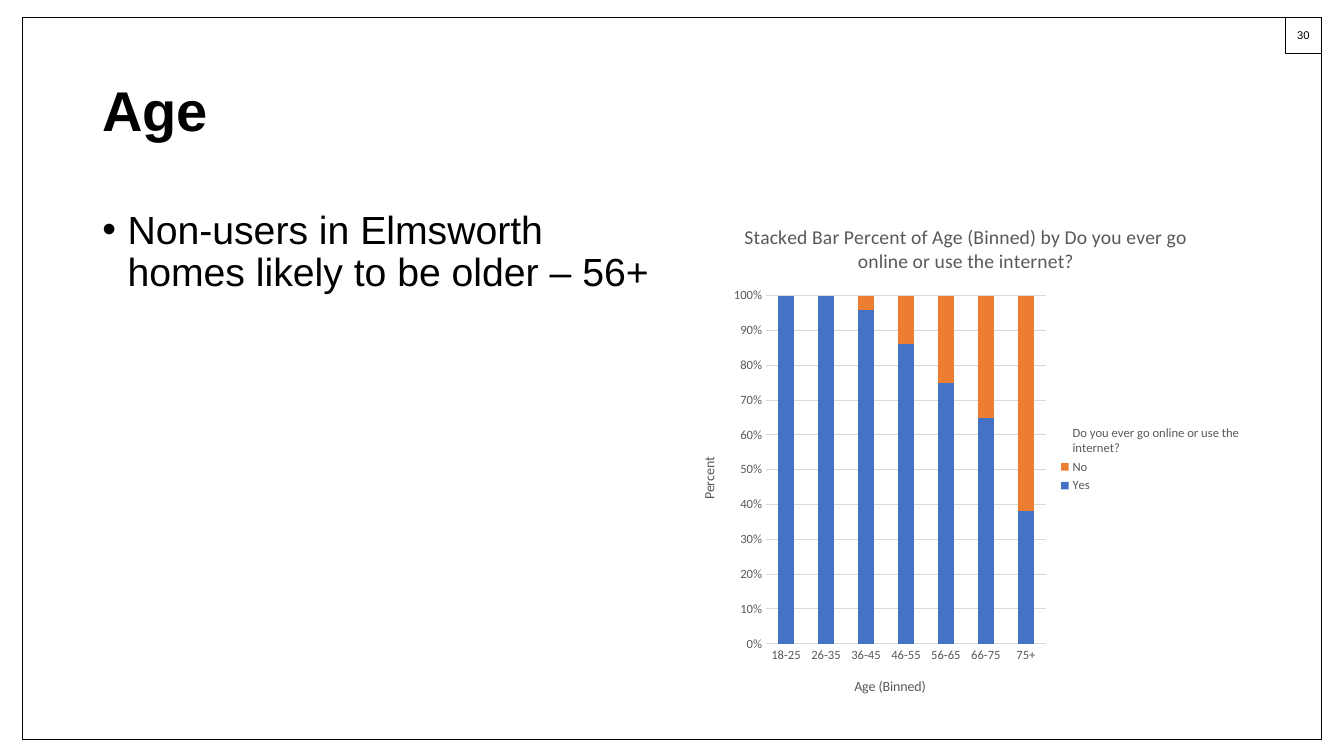
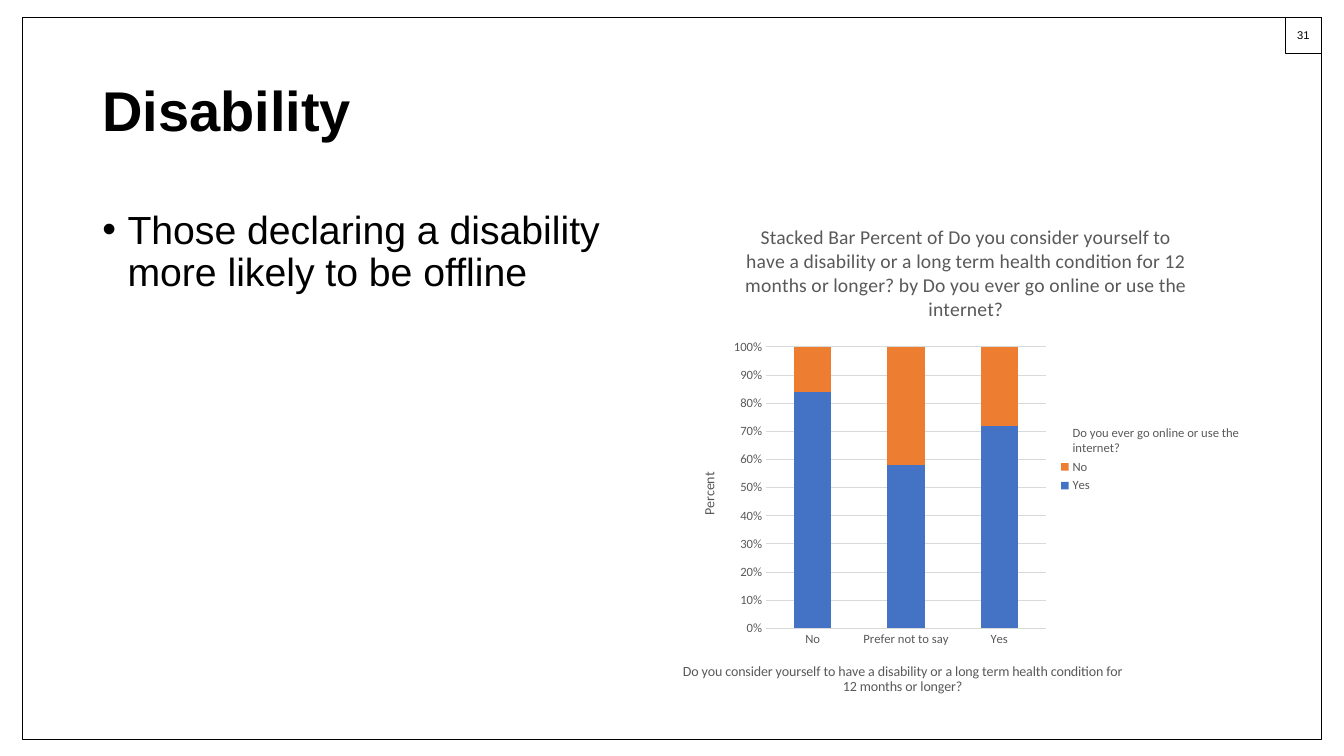
from dataclasses import dataclass
from typing import Any, Optional

import lxml.etree
import pptx
import pptx.chart.data
import pptx.dml.color
import pptx.enum.chart
import pptx.enum.text
import pptx.enum.shapes
import pptx.oxml.ns
import pptx.util

Pt = pptx.util.Pt
qn = pptx.oxml.ns.qn

COLOURS = {
    "ink": "000000",
    "label": "595959",
    "grid": "D9D9D9",
    "yes": "4472C4",
    "no": "ED7D31",
}
TEXT_FONT = "Arial"
CHART_FONT = "Calibri"
QUESTION = "Do you ever go online or use the internet?"
CONDITION = ("Do you consider yourself to have a disability or a long term "
             "health condition for 12 months or longer?")


@dataclass(frozen=True)
class Box:
    left: float
    top: float
    width: float
    height: float

    def lengths(self) -> tuple:
        return Pt(self.left), Pt(self.top), Pt(self.width), Pt(self.height)


@dataclass(frozen=True)
class Spot:
    x: float
    y: float
    w: Optional[float] = None
    h: Optional[float] = None


@dataclass(frozen=True)
class Finding:
    number: str
    heading: str
    point: str
    variable: str
    groups: tuple
    yes: tuple
    no: tuple
    plot: Spot
    percent_title: Spot
    variable_title: Spot


FRAME = Box(16.2, 12.3, 927.6, 515.8)
NUMBER = Box(918.3, 12.3, 25.5, 25.5)
HEADING = Box(66, 28.8, 828, 104.4)
POINT = Box(66, 146.9, 406, 365)
CHART = Box(486, 145.5, 408, 365.6)

FINDINGS = (
    Finding(
        "30", "Age", "Non-users in Elmsworth homes likely to be older – 56+",
        "Age (Binned)",
        ("18-25", "26-35", "36-45", "46-55", "56-65", "66-75", "75+"),
        (100, 100, 96, 86, 75, 65, 38),
        (None, None, 4, 14, 25, 35, 62),
        Spot(0.15, 0.18, 0.49, 0.68), Spot(0.03, 0.49), Spot(0.3, 0.92),
    ),
    Finding(
        "31", "Disability", "Those declaring a disability more likely to be offline",
        CONDITION,
        ("No", "Prefer not to say", "Yes"),
        (84, 58, 72),
        (16, 42, 28),
        Spot(0.15, 0.28, 0.49, 0.55), Spot(0.03, 0.52), Spot(0.0, 0.89),
    ),
)


def rgb(name: str) -> pptx.dml.color.RGBColor:
    return pptx.dml.color.RGBColor.from_string(COLOURS[name])


def style_font(font: Any, size: float, colour: str, face: str, bold: bool = False) -> None:
    font.size = Pt(size)
    font.name = face
    font.bold = bold
    font.color.rgb = rgb(colour)


def style_line(line: Any, colour: str, width: float) -> None:
    line.color.rgb = rgb(colour)
    line.width = Pt(width)


def add_outline(slide: Any, box: Box) -> Any:
    outline = slide.shapes.add_shape(
        pptx.enum.shapes.MSO_SHAPE.RECTANGLE, *box.lengths())
    outline.shadow.inherit = False
    outline.fill.background()
    style_line(outline.line, "ink", 0.5)
    return outline


def add_frame(slide: Any, number: str) -> None:
    number_frame = add_outline(slide, NUMBER).text_frame
    number_frame.word_wrap = False
    number_frame.vertical_anchor = pptx.enum.text.MSO_ANCHOR.MIDDLE
    number_frame.text = number
    paragraph = number_frame.paragraphs[0]
    paragraph.alignment = pptx.enum.text.PP_ALIGN.CENTER
    style_font(paragraph.font, 8, "ink", TEXT_FONT)
    add_outline(slide, FRAME)


def add_text(slide: Any, box: Box, text: str, size: float,
             bold: bool = False, bullet: bool = False) -> None:
    frame = slide.shapes.add_textbox(*box.lengths()).text_frame
    frame.word_wrap = True
    frame.text = text
    paragraph = frame.paragraphs[0]
    paragraph.line_spacing = 0.9
    if bullet:
        paragraph.space_before = Pt(10)
        properties = paragraph._p.get_or_add_pPr()
        properties.set("marL", str(Pt(18)))
        properties.set("indent", str(-Pt(18)))
        lxml.etree.SubElement(properties, qn("a:buFont")).set("typeface", TEXT_FONT)
        lxml.etree.SubElement(properties, qn("a:buChar")).set("char", "•")
    else:
        frame.vertical_anchor = pptx.enum.text.MSO_ANCHOR.MIDDLE
    style_font(paragraph.font, size, "ink", TEXT_FONT, bold)


def place(parent: Any, position: int, spot: Spot) -> None:
    for old in parent.findall(qn("c:layout")):
        parent.remove(old)
    layout = parent.makeelement(qn("c:layout"))
    parent.insert(position, layout)
    manual = lxml.etree.SubElement(layout, qn("c:manualLayout"))
    settings = {"xMode": "edge", "yMode": "edge", "x": spot.x, "y": spot.y}
    if spot.w is not None:
        settings = {"layoutTarget": "inner", **settings, "w": spot.w, "h": spot.h}
    for tag, value in settings.items():
        lxml.etree.SubElement(manual, qn(f"c:{tag}")).set("val", str(value))


def set_title(title: Any, text: str, size: float) -> None:
    title.text_frame.text = text
    style_font(title.text_frame.paragraphs[0].font, size, "label", CHART_FONT)


def style_axis(axis: Any, title: str, spot: Spot) -> None:
    axis.major_tick_mark = pptx.enum.chart.XL_TICK_MARK.NONE
    axis.minor_tick_mark = pptx.enum.chart.XL_TICK_MARK.NONE
    style_font(axis.tick_labels.font, 9, "label", CHART_FONT)
    set_title(axis.axis_title, title, 10)
    place(axis.axis_title._element, 1, spot)


def add_usage_chart(slide: Any, finding: Finding) -> None:
    data = pptx.chart.data.CategoryChartData()
    data.categories = finding.groups
    data.add_series("Yes", finding.yes)
    data.add_series("No", finding.no)
    data.add_series(QUESTION, (None,) * len(finding.groups))
    chart = slide.shapes.add_chart(
        pptx.enum.chart.XL_CHART_TYPE.COLUMN_STACKED_100, *CHART.lengths(), data).chart
    style_font(chart.font, 10, "ink", CHART_FONT)

    chart.has_title = True
    set_title(chart.chart_title, f"Stacked Bar Percent of {finding.variable} by {QUESTION}", 14)
    chart.chart_title.include_in_layout = False
    chart.has_legend = True
    chart.legend.position = pptx.enum.chart.XL_LEGEND_POSITION.RIGHT
    chart.legend.include_in_layout = False
    style_font(chart.legend.font, 9, "label", CHART_FONT)

    style_axis(chart.category_axis, finding.variable, finding.variable_title)
    style_line(chart.category_axis.format.line, "grid", 0.75)
    percent = chart.value_axis
    style_axis(percent, "Percent", finding.percent_title)
    percent.format.line.fill.background()
    percent.has_major_gridlines = True
    style_line(percent.major_gridlines.format.line, "grid", 0.75)
    percent.tick_labels.number_format = "0%"
    percent.tick_labels.number_format_is_linked = False

    bars = chart.plots[0]
    bars.gap_width = 150
    bars.overlap = 100
    bars.vary_by_categories = False
    for answer, colour in zip(bars.series, ("yes", "no", None)):
        if colour:
            answer.format.fill.solid()
            answer.format.fill.fore_color.rgb = rgb(colour)
        else:
            answer.format.fill.background()
    place(chart._chartSpace.chart.plotArea, 0, finding.plot)


def add_finding(deck: Any, finding: Finding) -> None:
    slide = deck.slides.add_slide(deck.slide_layouts[6])
    add_frame(slide, finding.number)
    add_text(slide, HEADING, finding.heading, 40, bold=True)
    add_text(slide, POINT, finding.point, 28, bullet=True)
    add_usage_chart(slide, finding)


def main() -> None:
    deck = pptx.Presentation()
    deck.slide_width = Pt(960)
    deck.slide_height = Pt(540)
    for finding in FINDINGS:
        add_finding(deck, finding)
    deck.save("out.pptx")


if __name__ == "__main__":
    main()
